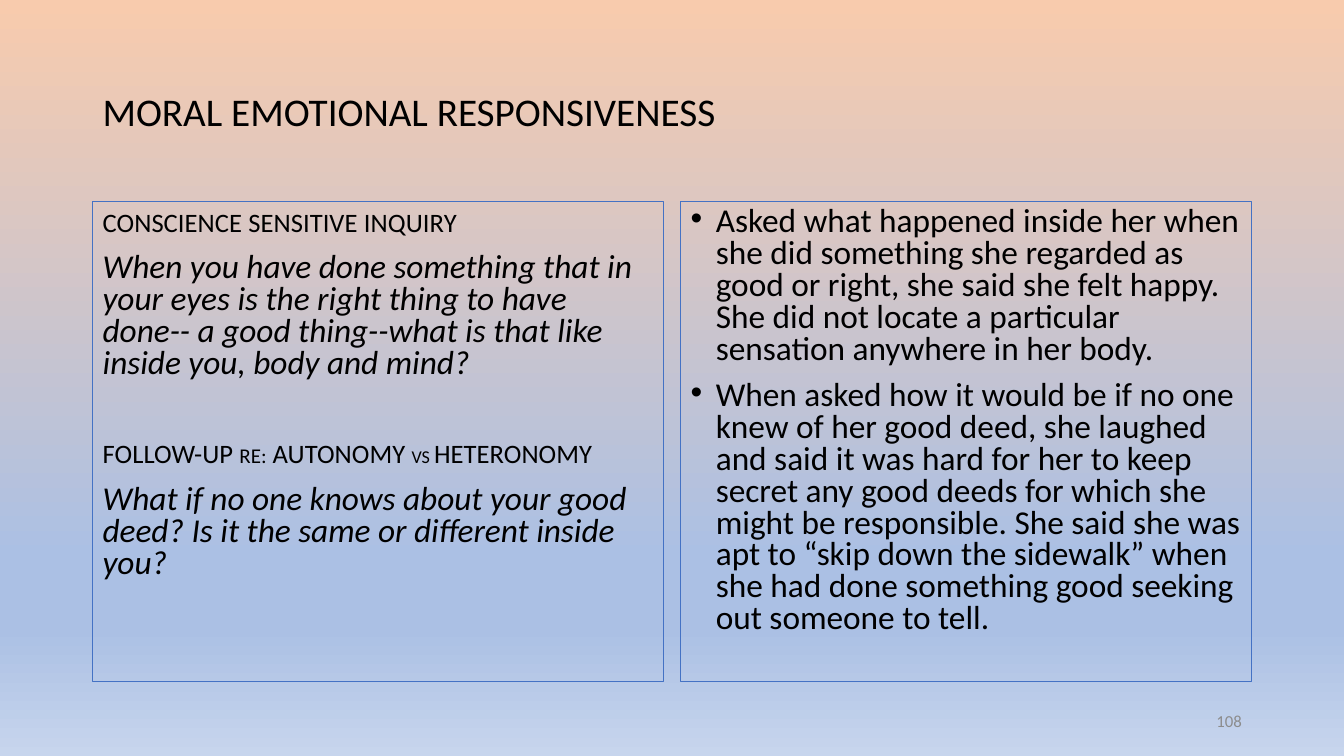
import pptx
import pptx.dml.color
import pptx.enum.shapes
import pptx.enum.text
import pptx.oxml.ns
import pptx.util
from lxml import etree

Pt = pptx.util.Pt
RGBColor = pptx.dml.color.RGBColor
ALIGN = pptx.enum.text.PP_ALIGN
ANCHOR = pptx.enum.text.MSO_ANCHOR
qn = pptx.oxml.ns.qn

BLACK = RGBColor(0x00, 0x00, 0x00)
GRAY = RGBColor(0x8C, 0x8C, 0x8C)
BLUE = RGBColor(0x44, 0x72, 0xC4)
PEACH = RGBColor(0xF8, 0xCB, 0xAD)
SKY = RGBColor(0xAB, 0xC0, 0xE4)
PALE = RGBColor(0xC7, 0xD5, 0xED)
BACKGROUND_STOPS = [(0, PEACH), (74, SKY), (83, SKY), (100, PALE)]

FONT = "Calibri"
BODY_SIZE = 23.8
LEFT = 66.24
PANEL_TOP, PANEL_WIDTH, PANEL_HEIGHT = 144, 408, 342.72
PANEL_STEP = 420
INDENT = 18

FOLLOW_UP = [("follow-up ", BODY_SIZE), ("re:", 18.7), (" autonomy ", BODY_SIZE),
             ("vs ", 16.1), ("heteronomy", BODY_SIZE)]
FINDINGS = [
    "Asked what happened inside her when she did something she regarded as good or right, "
    "she said she felt happy. She did not locate a particular sensation anywhere in her body.",
    "When asked how it would be if no one knew of her good deed, she laughed and said it was "
    "hard for her to keep secret any good deeds for which she might be responsible. She said "
    "she was apt to “skip down the sidewalk” when she had done something good seeking out "
    "someone to tell.",
]


def paint_background(slide):
    fill = slide.background.fill
    fill.gradient()
    fill.gradient_angle = 270
    stops = slide.background._cSld.find(".//" + qn("a:gsLst"))
    for stop in list(stops):
        stops.remove(stop)
    for percent, color in BACKGROUND_STOPS:
        stop = etree.SubElement(stops, qn("a:gs"), pos=str(percent * 1000))
        etree.SubElement(stop, qn("a:srgbClr"), val=str(color))


def prepare_frame(shape, anchor):
    frame = shape.text_frame
    frame.word_wrap = True
    frame.vertical_anchor = anchor
    return frame


def add_text_box(slide, left, top, width, height):
    box = slide.shapes.add_textbox(Pt(left), Pt(top), Pt(width), Pt(height))
    return prepare_frame(box, ANCHOR.MIDDLE)


def add_panel(slide, column):
    panel = slide.shapes.add_shape(
        pptx.enum.shapes.MSO_SHAPE.RECTANGLE, Pt(LEFT + column * PANEL_STEP),
        Pt(PANEL_TOP), Pt(PANEL_WIDTH), Pt(PANEL_HEIGHT))
    panel.shadow.inherit = False
    panel.fill.background()
    panel.line.color.rgb = BLUE
    panel.line.width = Pt(0.75)
    return prepare_frame(panel, ANCHOR.TOP)


def add_bullet(para):
    properties = para._p.get_or_add_pPr()
    properties.set("marL", str(Pt(INDENT)))
    properties.set("indent", str(-Pt(INDENT)))
    etree.SubElement(properties, qn("a:buFont"), typeface="Arial")
    etree.SubElement(properties, qn("a:buChar"), char="•")


def write(frame, text, size=BODY_SIZE, color=BLACK, align=ALIGN.LEFT, line=0.8,
          before=10, italic=False, small_caps=False, bullet=False):
    """Add a paragraph; text is a string or a list of (string, size) spans."""
    para = frame.paragraphs[0]
    if para.runs:
        para = frame.add_paragraph()
    para.alignment = align
    para.line_spacing = line
    para.space_before = Pt(before)
    if bullet:
        add_bullet(para)
    for words, points in [(text, size)] if isinstance(text, str) else text:
        span = para.add_run()
        span.text = words
        span.font.name = FONT
        span.font.size = Pt(points)
        span.font.color.rgb = color
        span.font.italic = italic
        if small_caps:
            span._r.get_or_add_rPr().set("cap", "small")


def main():
    deck = pptx.Presentation()
    deck.slide_width, deck.slide_height = Pt(960), Pt(540)
    slide = deck.slides.add_slide(deck.slide_layouts[6])
    paint_background(slide)

    title = add_text_box(slide, LEFT, 28.8, 828, 104.4)
    write(title, "MORAL EMOTIONAL RESPONSIVENESS", size=28, line=0.9, before=0)

    inquiry = add_panel(slide, 0)
    write(inquiry, "conscience sensitive inquiry", small_caps=True)
    write(inquiry, "When you have done something that in your eyes is the right thing to have "
          "done-- a good thing--what is that like inside you, body and mind?", italic=True)
    write(inquiry, FOLLOW_UP, line=Pt(31.2), before=33.2, small_caps=True)
    write(inquiry, "What if no one knows about your good deed? Is it the same or different "
          "inside you?", italic=True)

    findings = add_panel(slide, 1)
    for finding in FINDINGS:
        write(findings, finding, bullet=True)

    number = add_text_box(slide, 678.24, 500.4, 216, 28.8)
    write(number, "108", size=12, color=GRAY, align=ALIGN.RIGHT, line=1.0, before=0)

    deck.save("out.pptx")


if __name__ == "__main__":
    main()
